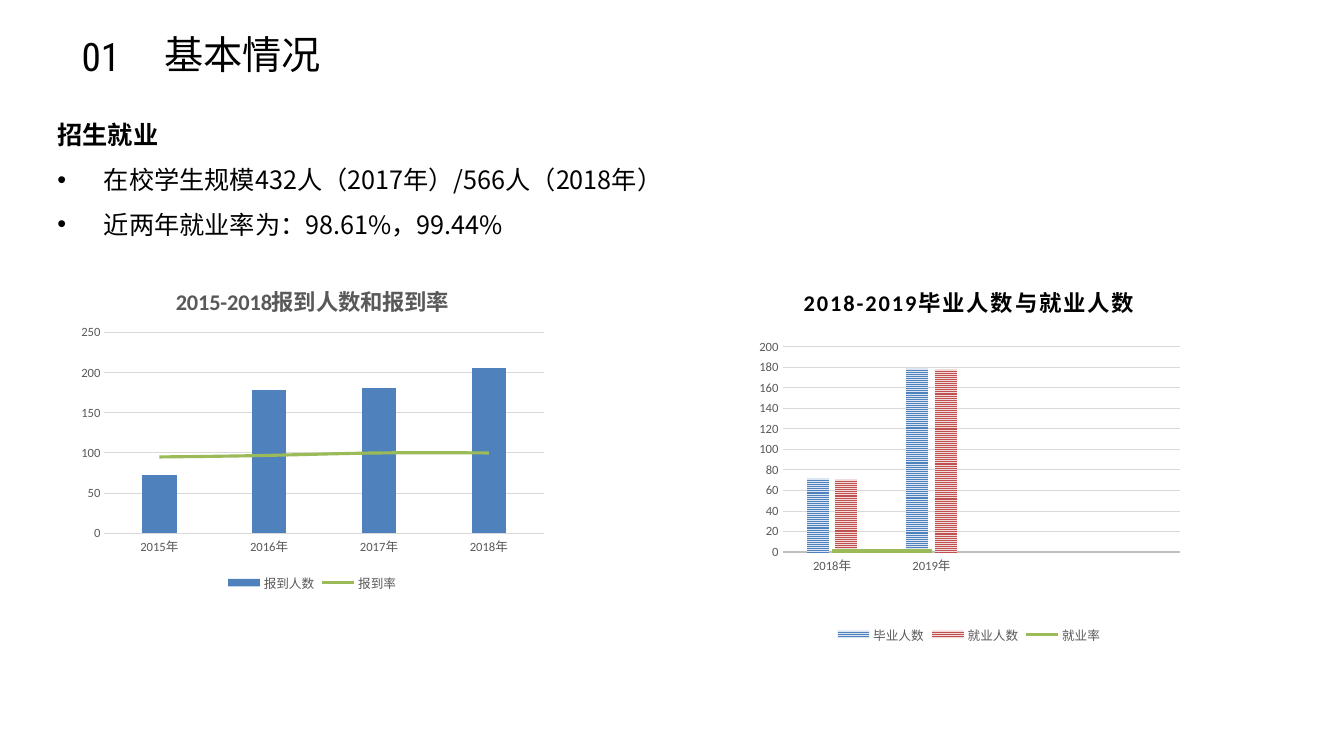
from dataclasses import dataclass

from lxml import etree
from pptx import Presentation
from pptx.chart.data import CategoryChartData
from pptx.dml.color import RGBColor
from pptx.enum.chart import XL_CHART_TYPE, XL_LEGEND_POSITION, XL_TICK_MARK
from pptx.enum.dml import MSO_PATTERN
from pptx.enum.text import MSO_ANCHOR, MSO_AUTO_SIZE, PP_ALIGN
from pptx.oxml import parse_xml
from pptx.oxml.ns import nsdecls, qn
from pptx.util import Cm, Pt

COLUMNS = XL_CHART_TYPE.COLUMN_CLUSTERED
LEGEND_BOTTOM = XL_LEGEND_POSITION.BOTTOM
NO_TICK = XL_TICK_MARK.NONE
NARROW_STRIPES = MSO_PATTERN.NARROW_HORIZONTAL
TOP = MSO_ANCHOR.TOP
NO_AUTOFIT = MSO_AUTO_SIZE.NONE
LEFT = PP_ALIGN.LEFT


@dataclass(frozen=True)
class Theme:
    cjk: str = "Noto Sans CJK SC"
    number: str = "Roboto Condensed"
    chart: str = "Calibri"
    black: str = "000000"
    grey: str = "595959"
    grid: str = "D9D9D9"
    axis: str = "BFBFBF"
    blue: str = "4F81BD"
    pale_blue: str = "DCE6F2"
    red: str = "C0504D"
    pale_red: str = "F2DCDB"
    green: str = "9BBB59"
    heading: int = 28
    body: int = 18
    chart_title: int = 16
    chart_label: int = 9


THEME = Theme()


@dataclass(frozen=True)
class Box:
    left: float
    top: float
    width: float
    height: float

    def emu(self) -> tuple:
        return tuple(Cm(v) for v in (self.left, self.top, self.width, self.height))


@dataclass(frozen=True)
class TextBlock:
    box: Box
    lines: tuple
    size: int
    spacing: float
    font: str = THEME.cjk
    bold: bool = False
    bullets: bool = False


@dataclass(frozen=True)
class Columns:
    name: str
    values: tuple
    color: str
    stripe_back: str = ""


@dataclass(frozen=True)
class ComboChart:
    box: Box
    title: str
    title_color: str
    title_tracking: int
    categories: tuple
    columns: tuple
    rate_name: str
    rates: tuple
    axis_color: str
    axis_width: float
    plot: tuple


TITLE = TextBlock(Box(4.14, 0.97, 5.44, 2.46), ("基本情况",), THEME.heading, 27.9)
TEXTS = (
    TextBlock(Box(2.06, 0.89, 2.11, 2.59), ("01",), THEME.heading, 31.4, THEME.number),
    TextBlock(Box(1.45, 2.92, 3.51, 1.78), ("招生就业",), THEME.body, 23.8, bold=True),
    TextBlock(Box(1.45, 4.06, 18.16, 2.01),
              ("在校学生规模432人（2017年）/566人（2018年）",
               "近两年就业率为：98.61%，99.44%"), THEME.body, 23.8, bullets=True),
)
CHARTS = (
    ComboChart(Box(1.78, 6.73, 12.17, 8.28), "2015-2018报到人数和报到率", THEME.grey, 0,
               ("2015年", "2016年", "2017年", "2018年"),
               (Columns("报到人数", (72, 179, 181, 206), THEME.blue),),
               "报到率", (95, 97, 100, 100), THEME.grid, 0.75, (0.07, 0.2, 0.91, 0.61)),
    ComboChart(Box(16.59, 6.73, 15.65, 9.58), "2018-2019毕业人数与就业人数", THEME.black, 150,
               ("2018年", "2019年", "", ""),
               (Columns("毕业人数", (72, 179, None, None), THEME.blue, THEME.pale_blue),
                Columns("就业人数", (71, 178, None, None), THEME.red, THEME.pale_red)),
               "就业率", (1, 1, None, None), THEME.axis, 1.5, (0.2, 0.21, 0.64, 0.54)),
)


def rgb(color: str) -> RGBColor:
    return RGBColor.from_string(color)


def set_all(target, values: dict) -> None:
    for name, value in values.items():
        setattr(target, name, value)


def set_font(font, size: int, color: str, name: str, bold: bool = False) -> None:
    set_all(font, {"size": Pt(size), "name": name, "bold": bold})
    font.color.rgb = rgb(color)


def add_bullet(p) -> None:
    pPr = p._p.get_or_add_pPr()
    indent = Cm(1.17)
    pPr.set("marL", str(indent))
    pPr.set("indent", str(-indent))
    etree.SubElement(pPr, qn("a:buFont")).set("typeface", "Arial")
    etree.SubElement(pPr, qn("a:buChar")).set("char", "•")


def fill_text(sp, block: TextBlock) -> None:
    set_all(sp, dict(zip(("left", "top", "width", "height"), block.box.emu())))
    tf = sp.text_frame
    set_all(tf, {"margin_left": 0, "margin_top": 0, "margin_right": 0, "margin_bottom": 0,
                 "word_wrap": True, "auto_size": NO_AUTOFIT, "vertical_anchor": TOP})
    for i, line in enumerate(block.lines):
        p = tf.add_paragraph() if i else tf.paragraphs[0]
        set_all(p, {"alignment": LEFT, "line_spacing": Pt(block.spacing),
                    "space_before": Pt(8.2 if i else 0)})
        if block.bullets:
            add_bullet(p)
        r = p.add_run()
        r.text = line
        set_font(r.font, block.size, THEME.black, block.font, block.bold)
        etree.SubElement(r._r.get_or_add_rPr(), qn("a:ea")).set("typeface", THEME.cjk)


def move_last_series_to_line(chart) -> None:
    """Turn the last column series into a line on the same axes."""
    bars = chart.plots[0]._element
    ser = bars.findall(qn("c:ser"))[-1]
    axes = "".join(f'<c:axId val="{a.get("val")}"/>' for a in bars.findall(qn("c:axId")))
    line = parse_xml(f'<c:lineChart {nsdecls("c")}><c:grouping val="standard"/>'
                     f'<c:varyColors val="0"/><c:marker val="1"/>{axes}</c:lineChart>')
    bars.addnext(line)
    line.insert(2, ser)
    for invert in ser.findall(qn("c:invertIfNegative")):
        ser.remove(invert)
    ser.append(parse_xml(f'<c:smooth {nsdecls("c")} val="1"/>'))
    ser.find(qn("c:tx")).addnext(
        parse_xml(f'<c:marker {nsdecls("c")}><c:symbol val="none"/></c:marker>'))


def place_plot(chart, fractions: tuple) -> None:
    area = chart.plots[0]._element.getparent()
    for old in area.findall(qn("c:layout")):
        area.remove(old)
    sizes = "".join(f'<c:{k} val="{v}"/>' for k, v in zip("xywh", fractions))
    area.insert(0, parse_xml(
        f'<c:layout {nsdecls("c")}><c:manualLayout><c:layoutTarget val="inner"/>'
        f'<c:xMode val="edge"/><c:yMode val="edge"/>{sizes}</c:manualLayout></c:layout>'))


def style_axes(chart, spec: ComboChart) -> None:
    cat, val = chart.category_axis, chart.value_axis
    for axis in (cat, val):
        set_all(axis, {"major_tick_mark": NO_TICK, "minor_tick_mark": NO_TICK})
        set_font(axis.tick_labels.font, THEME.chart_label, THEME.grey, THEME.chart)
    val.format.line.fill.background()
    for line, color, width in ((cat.format.line, spec.axis_color, spec.axis_width),
                               (val.major_gridlines.format.line, THEME.grid, 0.75)):
        line.color.rgb = rgb(color)
        line.width = Pt(width)


def add_combo_chart(s, spec: ComboChart) -> None:
    data = CategoryChartData()
    data.categories = spec.categories
    for col in spec.columns:
        data.add_series(col.name, col.values)
    data.add_series(spec.rate_name, spec.rates)
    chart = s.shapes.add_chart(COLUMNS, *spec.box.emu(), data).chart
    set_font(chart.font, 10, THEME.black, THEME.chart)
    r = chart.chart_title.text_frame.paragraphs[0].add_run()
    r.text = spec.title
    set_font(r.font, THEME.chart_title, spec.title_color, THEME.chart, True)
    r._r.get_or_add_rPr().set("spc", str(spec.title_tracking))
    chart.has_legend = True
    set_all(chart.legend, {"position": LEGEND_BOTTOM, "include_in_layout": False})
    set_font(chart.legend.font, THEME.chart_label, THEME.grey, THEME.chart)

    move_last_series_to_line(chart)
    bars, rate = chart.plots
    set_all(bars, {"gap_width": 219, "overlap": -27, "vary_by_categories": False})
    for series, col in zip(bars.series, spec.columns):
        fill = series.format.fill
        if col.stripe_back:
            fill.patterned()
            fill.pattern = NARROW_STRIPES
            fill.back_color.rgb = rgb(col.stripe_back)
        else:
            fill.solid()
        fill.fore_color.rgb = rgb(col.color)
    line = rate.series[0].format.line
    line.color.rgb = rgb(THEME.green)
    line.width = Pt(2.25)
    style_axes(chart, spec)
    place_plot(chart, spec.plot)


def main() -> None:
    prs = Presentation()
    set_all(prs, {"slide_width": Cm(33.87), "slide_height": Cm(19.05)})
    s = prs.slides.add_slide(prs.slide_layouts[5])
    fill_text(s.shapes.title, TITLE)
    for block in TEXTS:
        fill_text(s.shapes.add_textbox(*block.box.emu()), block)
    for spec in CHARTS:
        add_combo_chart(s, spec)
    prs.save("out.pptx")


if __name__ == "__main__":
    main()
